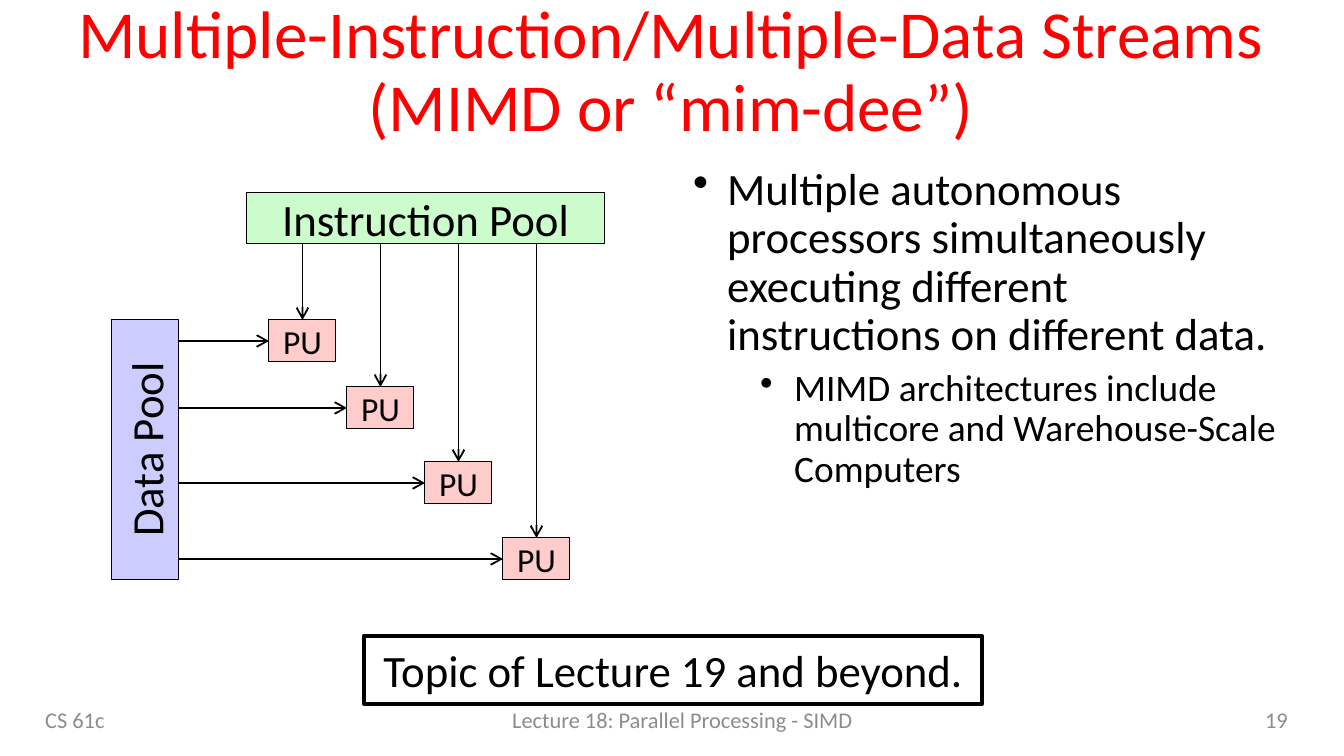
"""Build the slide on multiple-instruction, multiple-data processing."""
import pptx
import pptx.dml.color
import pptx.enum.shapes
import pptx.enum.text
import pptx.oxml.ns
import pptx.util
from lxml import etree

WIDE, HIGH = 1344, 756
SCALE = 9144000 / WIDE
THEME = {
    "font": "Calibri",
    "red": "FF0000", "black": "000000", "gray": "8C8C8C",
    "green": "CCFCCC", "pink": "FFCCCC", "blue": "CCCCFE",
    "title": 36, "big": 24, "mid": 20, "unit": 18, "foot": 12,
    "thin": 0.5, "wire": 1, "thick": 2.25,
}
ALIGN = {
    "left": pptx.enum.text.PP_ALIGN.LEFT,
    "center": pptx.enum.text.PP_ALIGN.CENTER,
    "right": pptx.enum.text.PP_ALIGN.RIGHT,
}
ANCHOR = {
    "top": pptx.enum.text.MSO_ANCHOR.TOP,
    "middle": pptx.enum.text.MSO_ANCHOR.MIDDLE,
}

TITLE = "Multiple-Instruction/Multiple-Data Streams\v(MIMD or “mim-dee”)"
POINTS = [
    {"text": "Multiple autonomous processors simultaneously executing "
             "different instructions on different data.",
     "size": "big", "level": 0, "left": 34, "before": 10},
    {"text": "MIMD architectures include multicore and Warehouse-Scale "
             "Computers",
     "size": "mid", "level": 1, "left": 101, "before": 5},
]
FEET = [
    ("CS 61c", 32, 331, "left"),
    ("Lecture 18: Parallel Processing - SIMD", 392, 581, "center"),
    ("19", 999, 302, "right"),
]
TOPIC = "Topic of Lecture 19 and beyond."
POOL = (246, 193, 359, 51)
DATA = (112, 319, 67, 261)
UNIT = (67, 42)
START, STEP = 269, 78
ROWS = [320, 387, 462, 538]


def px(value):
    return pptx.util.Emu(round(value * SCALE))


def color(name):
    return pptx.dml.color.RGBColor.from_string(THEME[name])


def write(frame, text, size="big", ink="black", align="left", space=None,
          before=None, level=0, left=None, more=False):
    para = frame.add_paragraph() if more else frame.paragraphs[0]
    para.text = text
    para.alignment = ALIGN[align]
    para.level = level
    if space:
        para.line_spacing = space
    if before:
        para.space_before = pptx.util.Pt(before)
    if left:
        props = para._p.get_or_add_pPr()
        props.set("marL", str(px(left)))
        props.set("indent", str(px(-34)))
        etree.SubElement(props, pptx.oxml.ns.qn("a:buChar"), char="•")
    for run in para.runs:
        run.font.name = THEME["font"]
        run.font.size = pptx.util.Pt(THEME[size])
        run.font.color.rgb = color(ink)


def area(slide, spot, anchor="middle"):
    frame = slide.shapes.add_textbox(*map(px, spot)).text_frame
    frame.word_wrap = True
    frame.vertical_anchor = ANCHOR[anchor]
    return frame


def box(slide, spot, text, fill=None, size="big", line="thin", turn=0):
    kind = pptx.enum.shapes.MSO_SHAPE.RECTANGLE
    shape = slide.shapes.add_shape(kind, *map(px, spot))
    shape.shadow.inherit = False
    shape.rotation = turn
    if fill:
        shape.fill.solid()
        shape.fill.fore_color.rgb = color(fill)
    else:
        shape.fill.background()
    shape.line.color.rgb = color("black")
    shape.line.width = pptx.util.Pt(THEME[line])
    frame = shape.text_frame
    frame.word_wrap = False
    frame.vertical_anchor = ANCHOR["middle"]
    frame.margin_left = frame.margin_right = 0
    frame.margin_top = frame.margin_bottom = 0
    write(frame, text, size=size, align="center")


def arrow(slide, *ends):
    kind = pptx.enum.shapes.MSO_CONNECTOR.STRAIGHT
    wire = slide.shapes.add_connector(kind, *map(px, ends))
    wire.line.color.rgb = color("black")
    wire.line.width = pptx.util.Pt(THEME["wire"])
    tag = pptx.oxml.ns.qn
    etree.SubElement(wire.line._get_or_add_ln(), tag("a:tailEnd"),
                     type="arrow")
    etree.SubElement(wire._element.spPr, tag("a:effectLst"))


def draw(slide):
    left, top, width, height = DATA
    wide, high = UNIT
    box(slide, POOL, "Instruction Pool", fill="green")
    flat = (left + (width - height) / 2, top + (height - width) / 2,
            height, width)
    box(slide, flat, "Data Pool", fill="blue", turn=270)
    for col, row in enumerate(ROWS):
        x = START + col * STEP
        box(slide, (x, row, wide, high), "PU", fill="pink", size="unit")
        arrow(slide, left + width, row + high / 2, x, row + high / 2)
        arrow(slide, x + wide / 2, POOL[1] + POOL[3], x + wide / 2, row)


def main():
    deck = pptx.Presentation()
    deck.slide_width, deck.slide_height = px(WIDE), px(HIGH)
    slide = deck.slides.add_slide(deck.slide_layouts[6])
    head = area(slide, (-23, 47, 1388, 126))
    head.margin_bottom = px(80)
    write(head, TITLE, size="title", ink="red", align="center", space=0.9)
    body = area(slide, (680, 160, 621, 520), anchor="top")
    for index, point in enumerate(POINTS):
        write(body, **point, space=0.9, more=index > 0)
    draw(slide)
    box(slide, (364, 636, 618, 68), TOPIC, line="thick")
    for text, left, width, align in FEET:
        foot = area(slide, (left, 700, width, 40))
        write(foot, text, size="foot", ink="gray", align=align)
    deck.save("out.pptx")


if __name__ == "__main__":
    main()
